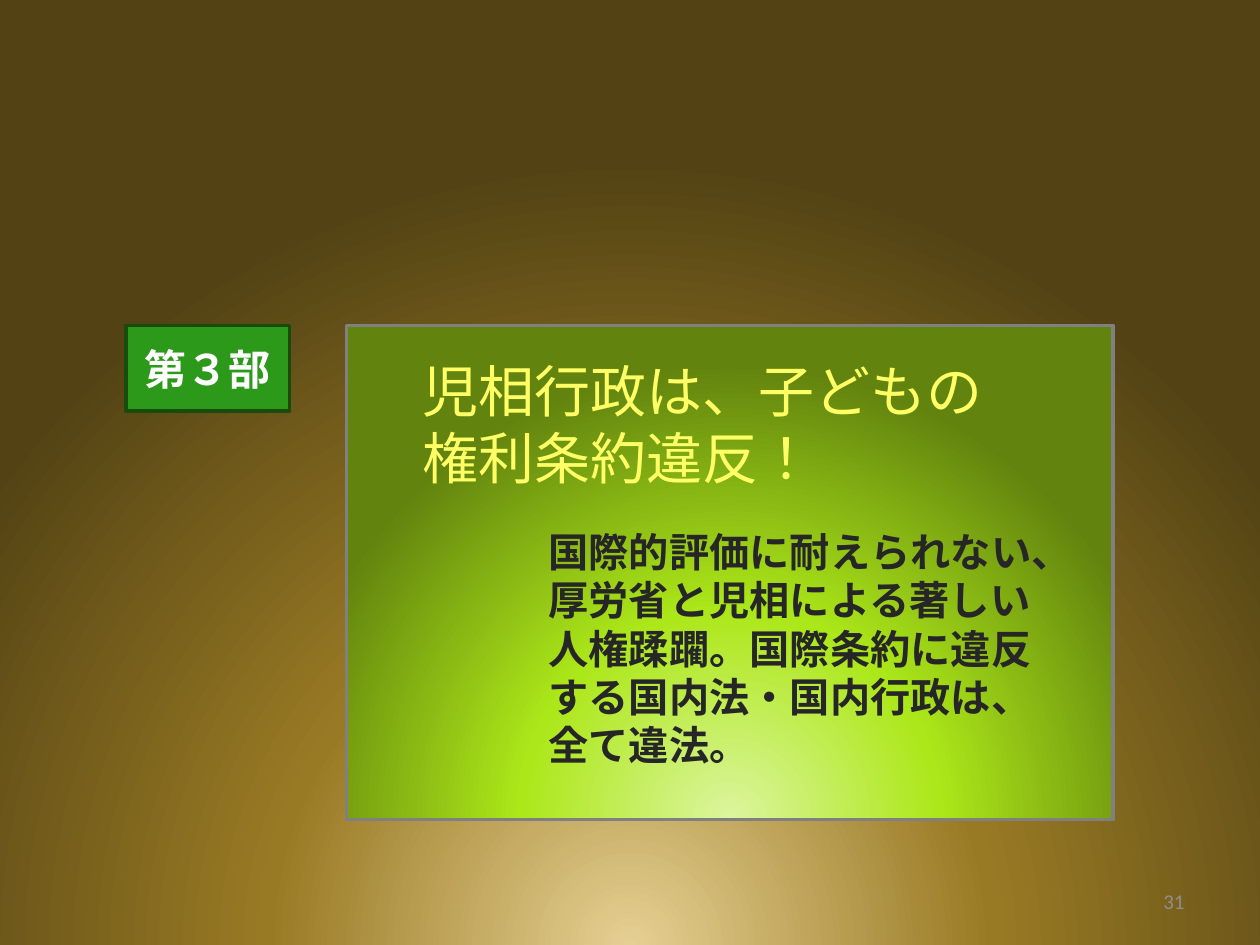
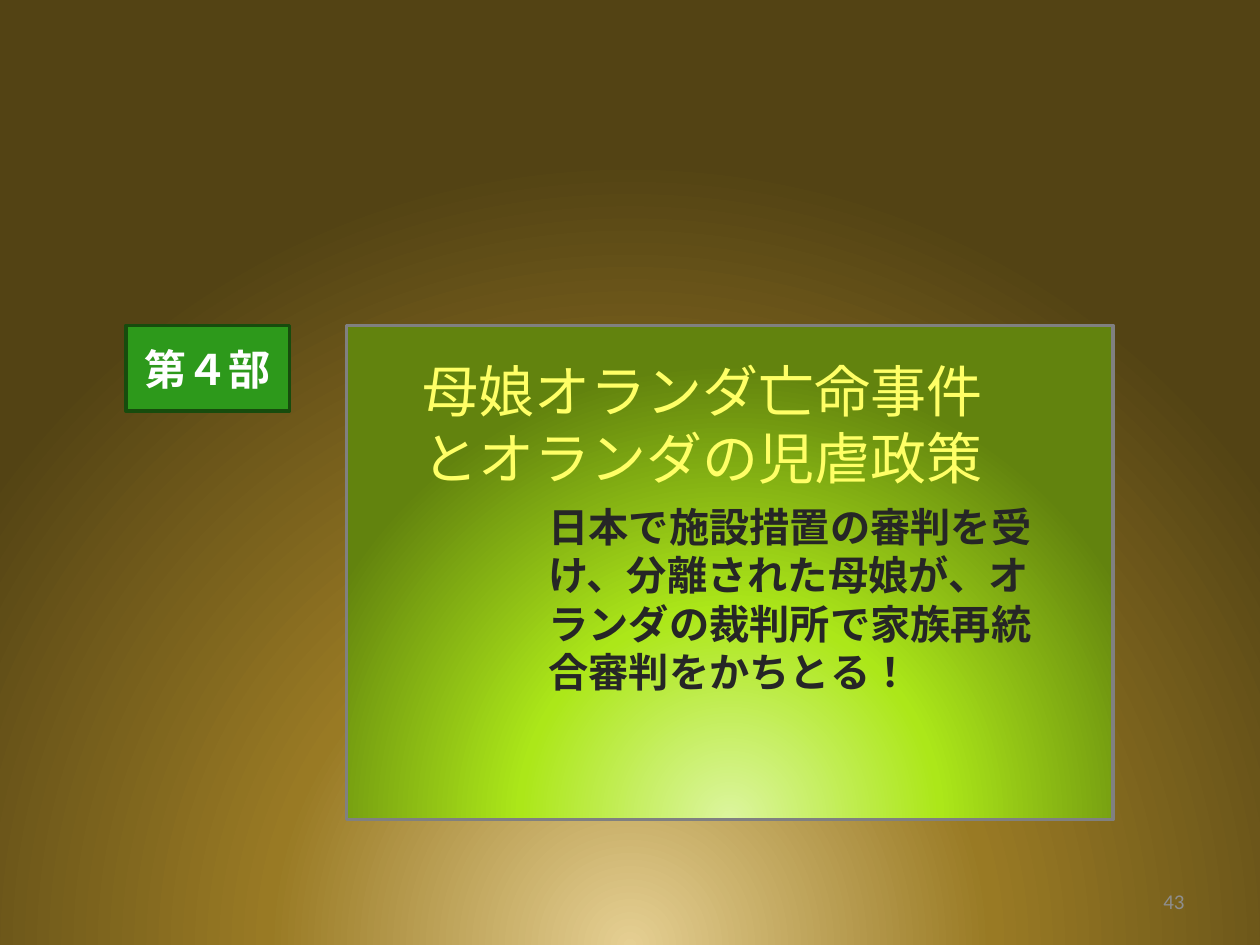
from dataclasses import dataclass

from lxml import etree
from pptx import Presentation
from pptx.dml.color import RGBColor
from pptx.enum.lang import MSO_LANGUAGE_ID as Lang
from pptx.enum.shapes import MSO_SHAPE as Shape
from pptx.enum.text import MSO_ANCHOR as Anchor, MSO_AUTO_SIZE as AutoSize, PP_ALIGN as Align
from pptx.oxml.ns import qn
from pptx.util import Cm, Pt


@dataclass(frozen=True)
class Theme:
    ground: tuple = ((0, "E5CF92"), (46, "997A24"), (100, "534314"))
    card: tuple = ((0, "DCF59E"), (46, "ACE719"), (100, "62830E"))
    card_line: str = "808080"
    tag: str = "2D991B"
    tag_line: str = "174C0D"
    cjk: str = "Noto Sans CJK JP"
    # role: (font, size, colour, bold, alignment, anchor, line pitch)
    title_text: tuple = ("Noto Sans CJK JP", 32, "FFFF66", False, Align.LEFT, Anchor.TOP, 38.4)
    body_text: tuple = ("Arial", 23, "262626", True, Align.LEFT, Anchor.TOP, 27.6)
    tag_text: tuple = ("Arial", 24, "FFFFFF", True, Align.CENTER, Anchor.MIDDLE, None)
    number_text: tuple = ("Calibri", 12, "8E8E8E", False, Align.RIGHT, Anchor.MIDDLE, None)


theme = Theme()


def fill_glow(fill, owner, stops):
    """Fill with a circular gradient centred below the bottom edge."""
    fill.solid()
    solid = owner.find(".//" + qn("a:solidFill"))
    grad = etree.Element(qn("a:gradFill"), rotWithShape="1")
    gs_list = etree.SubElement(grad, qn("a:gsLst"))
    for pos, colour in stops:
        gs = etree.SubElement(gs_list, qn("a:gs"), pos=str(pos * 1000))
        etree.SubElement(gs, qn("a:srgbClr"), val=colour)
    path = etree.SubElement(grad, qn("a:path"), path="circle")
    etree.SubElement(path, qn("a:fillToRect"), l="50000", t="130000", r="50000", b="-30000")
    solid.getparent().replace(solid, grad)


def put_text(sp, box, text, role):
    font, size, colour, bold, align, anchor, pitch = role
    sp.left, sp.top, sp.width, sp.height = (Cm(v) for v in box)
    tf = sp.text_frame
    tf.word_wrap, tf.auto_size, tf.vertical_anchor = True, AutoSize.NONE, anchor
    tf.text = text
    p = tf.paragraphs[0]
    p.alignment, p.space_before = align, Pt(0)
    if pitch:
        p.line_spacing = Pt(pitch)
    p.font.name, p.font.size, p.font.bold = font, Pt(size), bold
    p.font.color.rgb = RGBColor.from_string(colour)
    p.font.language_id = Lang.JAPANESE
    etree.SubElement(p._p.pPr.find(qn("a:defRPr")), qn("a:ea"), typeface=theme.cjk)


parts = [
    ("第３部", "児相行政は、子どもの権利条約違反！",
     "国際的評価に耐えられない、厚労省と児相による著しい人権蹂躙。"
     "国際条約に違反する国内法・国内行政は、全て違法。", 10.5, 5.18, "31"),
    ("第４部", "母娘オランダ亡命事件とオランダの児虐政策",
     "日本で施設措置の審判を受け、分離された母娘が、"
     "オランダの裁判所で家族再統合審判をかちとる！", 10.0, 4.22, "43"),
]

prs = Presentation()
prs.slide_width, prs.slide_height = Cm(25.4), Cm(19.05)
master = prs.slide_master
fill_glow(master.background.fill, master._element.cSld, theme.ground)
section_layout = prs.slide_layouts[2]

for tag_label, title, summary, summary_top, summary_height, number in parts:
    s = prs.slides.add_slide(section_layout)

    card = s.shapes.add_shape(Shape.RECTANGLE, Cm(6.99), Cm(6.56), Cm(15.45), Cm(9.96))
    card.shadow.inherit = False
    fill_glow(card.fill, card._element.spPr, theme.card)
    card.line.color.rgb = RGBColor.from_string(theme.card_line)
    card.line.width = Pt(2)
    s.shapes._spTree.insert(2, card._element)  # behind the placeholders

    put_text(s.shapes.title, (8.26, 7.05, 11.86, 3.0), title, theme.title_text)
    put_text(s.placeholders[1], (10.8, summary_top, 10.36, summary_height), summary, theme.body_text)

    tag = s.shapes.add_shape(Shape.RECTANGLE, 0, 0, 0, 0)
    tag.shadow.inherit = False
    tag.fill.solid()
    tag.fill.fore_color.rgb = RGBColor.from_string(theme.tag)
    tag.line.color.rgb = RGBColor.from_string(theme.tag_line)
    tag.line.width = Pt(2)
    put_text(tag, (2.54, 6.56, 3.3, 1.73), tag_label, theme.tag_text)

    page = s.shapes.add_textbox(0, 0, 0, 0)
    put_text(page, (18.2, 17.66, 5.93, 1.01), number, theme.number_text)

prs.save("out.pptx")
